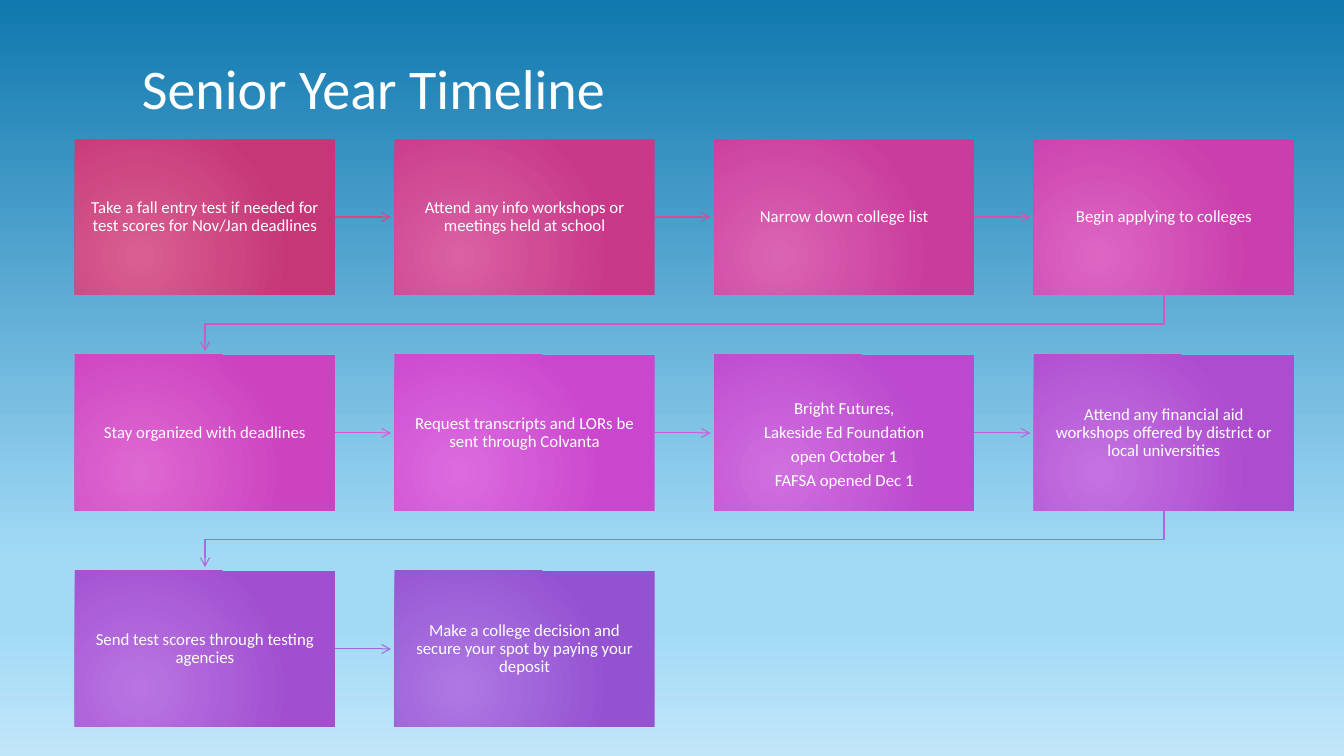
from lxml import etree
from pptx import Presentation
from pptx import util as u
from pptx.dml import color
from pptx.enum import shapes, text
from pptx.oxml import ns

PX = 914400 / 100.8
WHITE = "FFFFFF"
SKY = [(0, "1078AE"), (74, "A2DAF6"), (83, "A2DAF6"), (100, "C1E6F9")]
COLUMNS, ROWS = 4, 3
STEP_WIDTH, STEP_HEIGHT, INSET = 260, 156, 13
ARROW_LENGTH, ARROW_TURN = 56, 29

STEPS = [
    ("Take a fall entry test if needed for test scores for Nov/Jan deadlines", "D95F92", "C63777", "D64787"),
    ("Attend any info workshops or meetings held at school", "DA61A2", "C8398A", "D74B9C"),
    ("Narrow down college list", "DB64B3", "C93C9C", "D94FB0"),
    ("Begin applying to colleges", "DD66C3", "CA3FAD", "DA52C4"),
    ("Stay organized with deadlines", "DE69D2", "CC42BF", "DC56D7"),
    ("Request transcripts and LORs be sent through Colvanta", "DC6CDF", "CA46CD", "D15ADD"),
    ("Bright Futures,\nLakeside Ed Foundation\nopen October 1\nFAFSA opened Dec 1", "D06FE0", "BC49CE", "C25EDE"),
    ("Attend any financial aid workshops offered by district or local universities", "C472E1", "AE4CCF", "B462E0"),
    ("Send test scores through testing agencies", "B975E2", "A14FD0", "A666E1"),
    ("Make a college decision and secure your spot by paying your deposit", "AE78E3", "9452D1", None),
]


def px(length):
    return u.Emu(round(length * PX))


def rgb(value):
    return color.RGBColor.from_string(value)


def add(parent, tag, **attributes):
    return etree.SubElement(parent, ns.qn(tag), attributes)


def blend(owner, stops, radial=False):
    gradient = next(owner.element.iter(ns.qn("a:gradFill")))
    gradient.clear()
    stop_list = add(gradient, "a:gsLst")
    for position, value in stops:
        stop = add(stop_list, "a:gs", pos=str(position * 1000))
        add(stop, "a:srgbClr", val=value)
    if radial:
        focus = add(gradient, "a:path", path="circle")
        add(focus, "a:fillToRect", l="50000", t="100000", r="100000", b="50000")
    else:
        add(gradient, "a:lin", ang="5400000", scaled="0")


def write(frame, wording, size, align=text.PP_ALIGN.LEFT, anchor=text.MSO_ANCHOR.MIDDLE,
          spacing=0.9, gap=0, insets=(10, 5, 10, 5)):
    frame.word_wrap = True
    frame.vertical_anchor = anchor
    frame.margin_left, frame.margin_top, frame.margin_right, frame.margin_bottom = map(px, insets)
    lines = wording.split("\n")
    for number, line in enumerate(lines):
        paragraph = frame.add_paragraph() if number else frame.paragraphs[0]
        paragraph.alignment = align
        paragraph.line_spacing = spacing
        if number < len(lines) - 1:
            paragraph.space_after = u.Pt(gap)
        run = paragraph.add_run()
        run.text = line
        run.font.name = "Calibri"
        run.font.size = u.Pt(size)
        run.font.color.rgb = rgb(WHITE)


def draw_title(slide, left, top, width, height):
    title = slide.shapes.add_textbox(px(left), px(top), px(width), px(height))
    write(title.text_frame, "Senior Year Timeline", 40, anchor=text.MSO_ANCHOR.BOTTOM)


def draw_step(slide, left, top, wording, glow, shade):
    step = slide.shapes.add_shape(shapes.MSO_SHAPE.RECTANGLE, px(left), px(top),
                                  px(STEP_WIDTH), px(STEP_HEIGHT))
    step.shadow.inherit = False
    step.line.fill.background()
    step.fill.gradient()
    blend(step, [(0, glow), (100, shade)], radial=True)
    lead = 25 if "\n" in wording else 0
    write(step.text_frame, wording, 12, align=text.PP_ALIGN.CENTER, gap=4.2,
          insets=(INSET, INSET + lead, INSET, INSET))


def style_arrow(arrow, value):
    arrow.line.color.rgb = rgb(value)
    arrow.line.width = u.Pt(0.75)
    add(arrow.element.spPr.find(ns.qn("a:ln")), "a:tailEnd", type="arrow")


def draw_next_arrow(slide, left, top, value):
    start, middle = left + STEP_WIDTH, top + STEP_HEIGHT / 2
    arrow = slide.shapes.add_connector(shapes.MSO_CONNECTOR.STRAIGHT, px(start), px(middle),
                                       px(start + ARROW_LENGTH), px(middle))
    style_arrow(arrow, value)
    add(arrow.element.spPr, "a:effectLst")


def draw_return_arrow(slide, left, top, first_left, value):
    start, end = left + STEP_WIDTH / 2, first_left + STEP_WIDTH / 2
    bottom = top + STEP_HEIGHT
    turn = bottom + ARROW_TURN
    outline = slide.shapes.build_freeform(px(start), px(bottom))
    corners = [(start, turn), (end, turn), (end, bottom + ARROW_LENGTH)]
    outline.add_line_segments([(px(x), px(y)) for x, y in corners], close=False)
    arrow = outline.convert_to_shape()
    arrow.shadow.inherit = False
    arrow.fill.background()
    style_arrow(arrow, value)


def draw_timeline(slide, left, top, width, height):
    column_pitch = (width - STEP_WIDTH) / (COLUMNS - 1)
    row_pitch = (height - STEP_HEIGHT) / (ROWS - 1)
    for number, (wording, glow, shade, arrow_color) in enumerate(STEPS):
        row, column = divmod(number, COLUMNS)
        x, y = left + column * column_pitch, top + row * row_pitch
        draw_step(slide, x, y, wording, glow, shade)
        if arrow_color and column < COLUMNS - 1:
            draw_next_arrow(slide, x, y, arrow_color)
        elif arrow_color:
            draw_return_arrow(slide, x, y, left, arrow_color)


def main():
    deck = Presentation()
    deck.slide_width, deck.slide_height = px(1344), px(756)
    slide = deck.slides.add_slide(deck.slide_layouts[6])
    slide.background.fill.gradient()
    blend(slide, SKY)
    draw_title(slide, 132, 30, 1105, 97)
    draw_timeline(slide, 75, 139, 1219, 588)
    deck.save("out.pptx")


if __name__ == "__main__":
    main()
